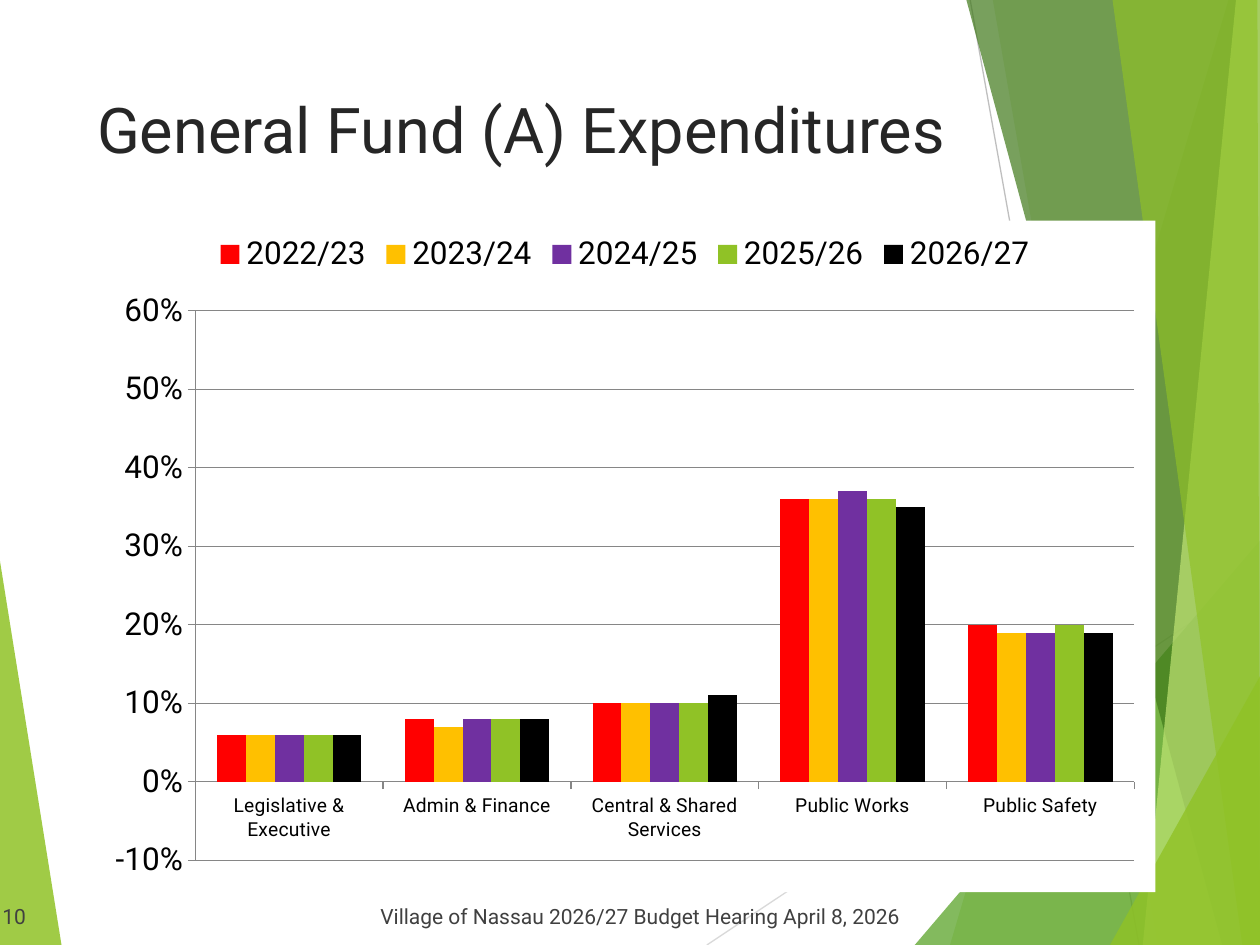
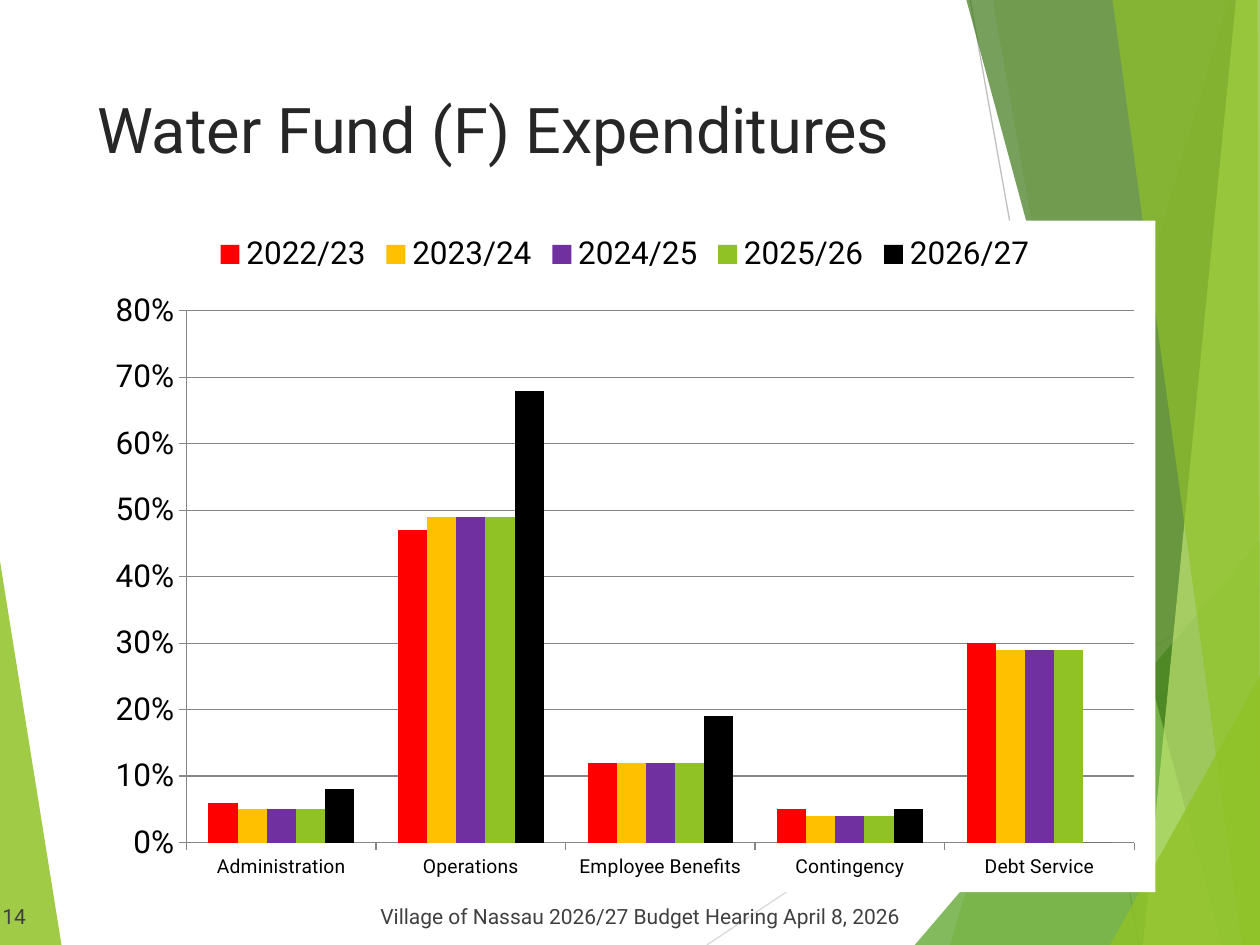
"""Build the expenditure slides of the village budget hearing."""
from dataclasses import dataclass

from lxml.etree import SubElement
from pptx import Presentation
from pptx.chart.data import CategoryChartData as ChartData
from pptx.dml.color import RGBColor as Color
from pptx.enum.chart import XL_CHART_TYPE as Kind
from pptx.enum.chart import XL_LEGEND_POSITION as Place
from pptx.enum.chart import XL_TICK_MARK as Tick
from pptx.enum.shapes import MSO_CONNECTOR as Link
from pptx.enum.text import MSO_ANCHOR as Anchor
from pptx.enum.text import MSO_AUTO_SIZE as Fit
from pptx.enum.text import PP_ALIGN as Align
from pptx.oxml import parse_xml
from pptx.oxml.ns import nsdecls, qn
from pptx.util import Pt

SCALE = 9144
WIDE, HIGH = 1000, 750


@dataclass(frozen=True)
class Theme:
    """Hold the colours, font and type sizes of the deck."""
    font: str = "Roboto"
    title: str = "262626"
    foot: str = "404040"
    text: str = "000000"
    paper: str = "FFFFFF"
    grid: str = "868686"
    pale: str = "D9D9D9"
    grey: str = "BFBFBF"
    lime: str = "90C226"
    leaf: str = "54A021"
    moss: str = "3F7819"
    mint: str = "C0E474"
    title_size: int = 36
    foot_size: int = 12
    chart_size: int = 18
    label_size: int = 11


THEME = Theme()

RAYS = [
    (THEME.pale, (561, 750), (1001, 457)),
    (THEME.grey, (770, 0), (904, 750)),
]

BANDS = [
    (THEME.lime, 30, [(975, 0), (754, 750), (1001, 750), (1001, 0)]),
    (THEME.lime, 20, [(788, 0), (919, 750), (1001, 750), (1001, 0)]),
    (THEME.leaf, 72, [(726, 750), (1000, 429), (1001, 750)]),
    (THEME.moss, 70, [(767, 0), (970, 750), (1001, 750), (1001, 0)]),
    (THEME.mint, 70, [(981, 0), (907, 750), (1001, 750), (1000, 0)]),
    (THEME.lime, 65, [(883, 0), (986, 750), (1000, 750), (998, 0)]),
    (THEME.lime, 80, [(881, 750), (1001, 535), (1001, 750)]),
]
WEDGE = (THEME.lime, 85, [(-1, 439), (49, 751), (-1, 750)])

YEARS = {
    "2022/23": "FF0000",
    "2023/24": "FFC000",
    "2024/25": "7030A0",
    "2025/26": THEME.lime,
    "2026/27": THEME.text,
}

FOOTER = "Village of Nassau 2026/27 Budget Hearing April 8, 2026"

FUNDS = [
    {
        "page": 10,
        "title": "General Fund (A) Expenditures",
        "range": (-0.1, 0.6),
        "rows": {
            "Legislative & Executive": (0.06, 0.06, 0.06, 0.06, 0.06),
            "Admin & Finance": (0.08, 0.07, 0.08, 0.08, 0.08),
            "Central & Shared Services": (0.1, 0.1, 0.1, 0.1, 0.11),
            "Public Works": (0.36, 0.36, 0.37, 0.36, 0.35),
            "Public Safety": (0.2, 0.19, 0.19, 0.2, 0.19),
        },
    },
    {
        "page": 14,
        "title": "Water Fund (F) Expenditures",
        "range": (0, 0.8),
        "rows": {
            "Administration": (0.06, 0.05, 0.05, 0.05, 0.08),
            "Operations": (0.47, 0.49, 0.49, 0.49, 0.68),
            "Employee Benefits": (0.12, 0.12, 0.12, 0.12, 0.19),
            "Contingency": (0.05, 0.04, 0.04, 0.04, 0.05),
            "Debt Service": (0.3, 0.29, 0.29, 0.29, 0),
        },
    },
]


def px(*sizes):
    """Turn px lengths into a list of EMU."""
    return [size * SCALE for size in sizes]


def paint(fill, color):
    """Give a fill one solid colour."""
    fill.solid()
    fill.fore_color.rgb = Color.from_string(color)


def stroke(line, color, width=0.75):
    """Set the colour and width of a line."""
    line.color.rgb = Color.from_string(color)
    line.width = Pt(width)


def style(font, size, color):
    """Set the typeface, size and colour of a font."""
    font.name = THEME.font
    font.size = Pt(size)
    font.color.rgb = Color.from_string(color)


def ray(slide, color, start, end):
    """Draw a thin straight line."""
    line = slide.shapes.add_connector(Link.STRAIGHT, *px(*start, *end))
    stroke(line.line, color)
    SubElement(line._element.spPr, qn("a:effectLst"))


def band(slide, color, alpha, points):
    """Draw a see-through polygon."""
    pen = slide.shapes.build_freeform(*points[0], scale=SCALE)
    pen.add_line_segments(points[1:], close=True)
    shape = pen.convert_to_shape()
    shape.shadow.inherit = False
    paint(shape.fill, color)
    shape.line.fill.background()
    tint = shape._element.spPr.find(".//" + qn("a:srgbClr"))
    SubElement(tint, qn("a:alpha"), val=str(alpha * 1000))


def backdrop(slide):
    """Draw the shared green bands and thin rays."""
    band(slide, *WEDGE)
    for item in RAYS:
        ray(slide, *item)
    for item in BANDS:
        band(slide, *item)


def footer(slide, page):
    """Write the page number and the tabbed footer line."""
    box = slide.shapes.add_textbox(*px(-8, 702, 775, 40))
    frame = box.text_frame
    frame.word_wrap = True
    frame.vertical_anchor = Anchor.BOTTOM
    frame.text = f"{page}\t{FOOTER}"
    line = frame.paragraphs[0]
    stops = SubElement(line._p.get_or_add_pPr(), qn("a:tabLst"))
    SubElement(stops, qn("a:tab"), pos=str(300 * SCALE), algn="l")
    style(line.runs[0].font, THEME.foot_size, THEME.foot)


def heading(slide, text):
    """Place and format the title."""
    box = slide.shapes.title
    box.left, box.top, box.width, box.height = px(67, 67, 717, 144)
    frame = box.text_frame
    frame.text = text
    frame.auto_size = Fit.NONE
    frame.vertical_anchor = Anchor.TOP
    line = frame.paragraphs[0]
    line.alignment = Align.LEFT
    style(line.runs[0].font, THEME.title_size, THEME.title)


def scale_axis(chart, low, high):
    """Format both axes and the percent range."""
    axis = chart.value_axis
    axis.minimum_scale, axis.maximum_scale = low, high
    axis.major_unit = 0.1
    axis.has_major_gridlines = True
    stroke(axis.major_gridlines.format.line, THEME.grid)
    axis.tick_labels.number_format = "0%"
    axis.tick_labels.number_format_is_linked = False
    labels = chart.category_axis.tick_labels
    style(labels.font, THEME.label_size, THEME.text)
    for side in (axis, chart.category_axis):
        side.major_tick_mark = Tick.OUTSIDE
        side.minor_tick_mark = Tick.NONE
        stroke(side.format.line, THEME.grid)


def back(chart):
    """Put a plain white ground behind the chart."""
    ground = parse_xml(
        f'<c:spPr {nsdecls("c", "a")}><a:solidFill>'
        f'<a:srgbClr val="{THEME.paper}"/></a:solidFill>'
        "<a:ln><a:noFill/></a:ln></c:spPr>"
    )
    chart._chartSpace.find(qn("c:chart")).addnext(ground)


def graph(slide, rows, low, high):
    """Add the clustered columns, one series for each year."""
    data = ChartData(number_format="0%")
    data.categories = list(rows)
    for year, shares in zip(YEARS, zip(*rows.values())):
        data.add_series(year, shares)
    place = px(75, 175, 842, 533)
    chart = slide.shapes.add_chart(Kind.COLUMN_CLUSTERED, *place, data).chart
    style(chart.font, THEME.chart_size, THEME.text)
    chart.has_title = False
    chart.has_legend = True
    chart.legend.position = Place.TOP
    chart.legend.include_in_layout = False
    plot = chart.plots[0]
    plot.gap_width = 150
    plot.overlap = 0
    plot.vary_by_categories = False
    for series, color in zip(plot.series, YEARS.values()):
        series.invert_if_negative = False
        paint(series.format.fill, color)
    scale_axis(chart, low, high)
    back(chart)


def main():
    """Build and save the deck."""
    deck = Presentation()
    deck.slide_width, deck.slide_height = px(WIDE, HIGH)
    for fund in FUNDS:
        slide = deck.slides.add_slide(deck.slide_layouts[5])
        paint(slide.background.fill, THEME.paper)
        backdrop(slide)
        footer(slide, fund["page"])
        heading(slide, fund["title"])
        graph(slide, fund["rows"], *fund["range"])
    deck.save("out.pptx")


if __name__ == "__main__":
    main()
